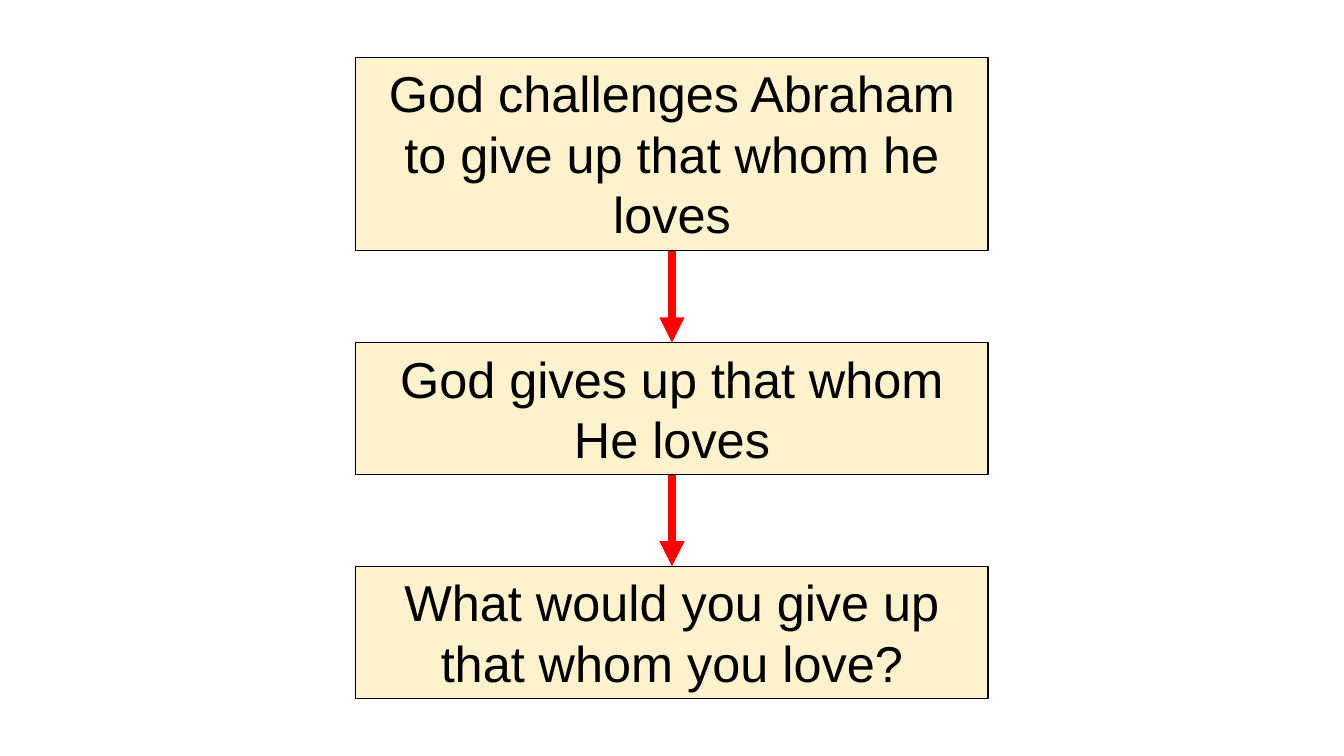
import pptx
import pptx.util
import pptx.dml.color
import pptx.enum.shapes
import pptx.enum.text
import pptx.oxml
import pptx.oxml.ns
from pptx.util import Inches

STEPS = [
    ("God challenges Abraham to give up that whom he loves", 1.92),
    ("God gives up that whom He loves", 1.31),
    ("What would you give up that whom you love?", 1.31),
]
COLORS = {"fill": "FFF2CC", "ink": "000000", "arrow": "FF0000"}
LEFT, TOP, WIDTH, GAP = 3.53, 0.57, 6.27, 0.91


def color(name):
    return pptx.dml.color.RGBColor.from_string(COLORS[name])


def add_step(slide, text, top, height):
    box = slide.shapes.add_shape(
        pptx.enum.shapes.MSO_SHAPE.RECTANGLE,
        Inches(LEFT), Inches(top), Inches(WIDTH), Inches(height))
    box.shadow.inherit = False
    box.fill.solid()
    box.fill.fore_color.rgb = color("fill")
    box.line.color.rgb = color("ink")
    box.line.width = pptx.util.Pt(0.75)
    frame = box.text_frame
    frame.word_wrap = True
    frame.auto_size = pptx.enum.text.MSO_AUTO_SIZE.SHAPE_TO_FIT_TEXT
    frame.vertical_anchor = pptx.enum.text.MSO_ANCHOR.TOP
    para = frame.paragraphs[0]
    para.alignment = pptx.enum.text.PP_ALIGN.CENTER
    run = para.add_run()
    run.text = text
    run.font.name = "Arial"
    run.font.size = pptx.util.Pt(36)
    run.font.color.rgb = color("ink")
    return box


def add_arrow(slide, start, end):
    arrow = slide.shapes.add_connector(
        pptx.enum.shapes.MSO_CONNECTOR.STRAIGHT, 0, 0, 0, 0)
    arrow.begin_connect(start, 2)
    arrow.end_connect(end, 0)
    arrow.line.color.rgb = color("arrow")
    arrow.line.width = pptx.util.Pt(6)
    space = pptx.oxml.ns.nsdecls("a")
    line = arrow.line._get_or_add_ln()
    line.append(pptx.oxml.parse_xml(f'<a:tailEnd {space} type="triangle"/>'))
    props = arrow._element.spPr
    props.append(pptx.oxml.parse_xml(f"<a:effectLst {space}/>"))


def main():
    deck = pptx.Presentation()
    deck.slide_width = Inches(13.33)
    deck.slide_height = Inches(7.5)
    slide = deck.slides.add_slide(deck.slide_layouts[6])
    boxes = []
    top = TOP
    for text, height in STEPS:
        boxes.append(add_step(slide, text, top, height))
        top += height + GAP
    for start, end in zip(boxes, boxes[1:]):
        add_arrow(slide, start, end)
    deck.save("out.pptx")


if __name__ == "__main__":
    main()
